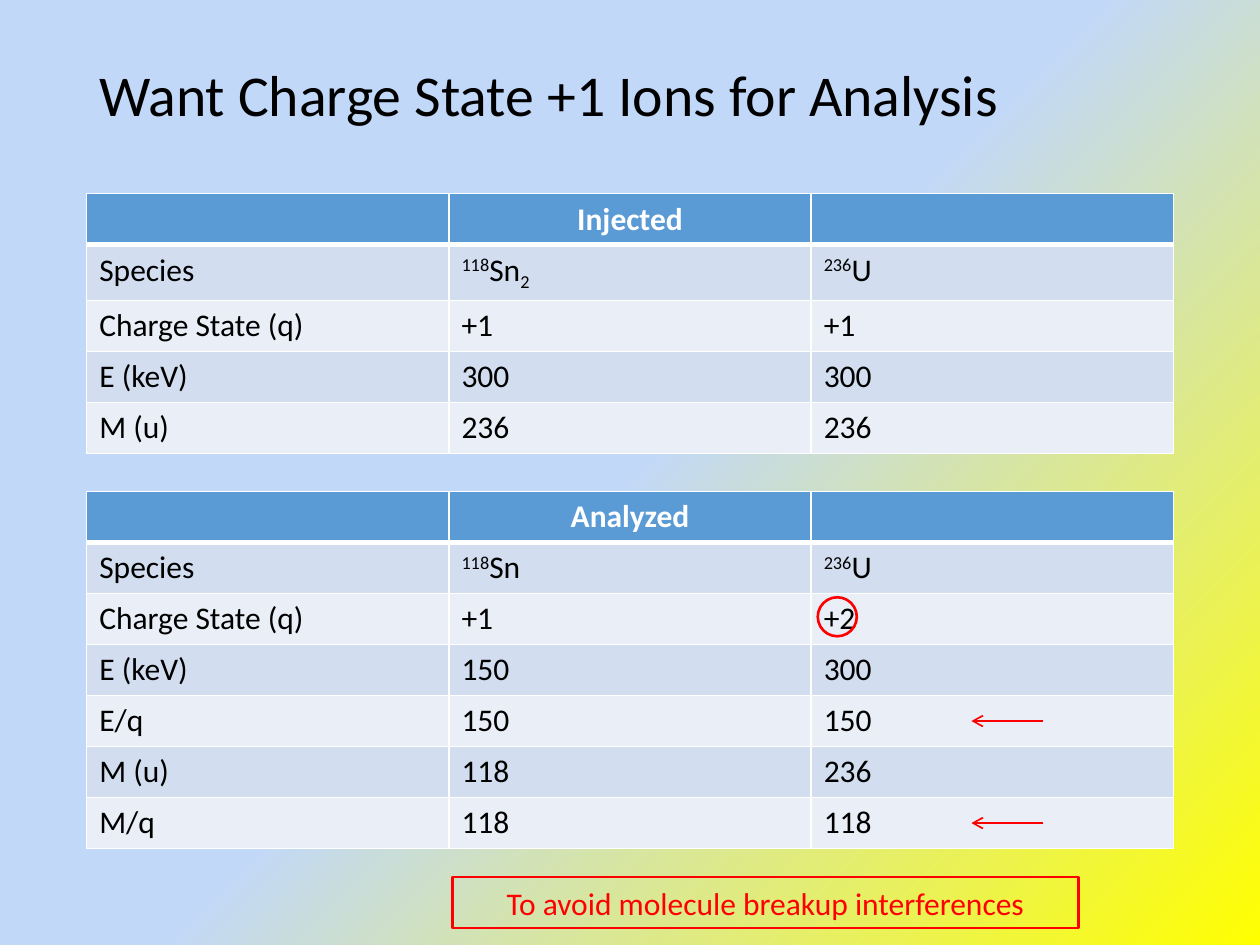
from lxml.etree import SubElement
from pptx import Presentation
from pptx.dml.color import RGBColor
from pptx.enum.shapes import MSO_CONNECTOR, MSO_SHAPE
from pptx.enum.text import MSO_ANCHOR, PP_ALIGN
from pptx.oxml.ns import qn
from pptx.util import Inches, Pt

deck = Presentation()
deck.slide_width, deck.slide_height = Inches(10), Inches(7.5)
page = deck.slides.add_slide(deck.slide_layouts[6])
color = RGBColor.from_string

RED, WHITE, BLACK = "FF0000", "FFFFFF", "000000"
HEADER, BANDS = "5B9BD5", ("EAEFF7", "D2DEEF")
BASELINES = {"^": "30000", "_": "-25000"}
LEFT, TABLE_COLUMN, TABLE_ROW = 6.88, 28.75, 5.4
ANALYZED_TOP = 52


def grid(*lengths):
    sides = (deck.slide_width, deck.slide_height)
    return [round(length * sides[index % 2] / 100) for index, length in enumerate(lengths)]


def style(para, size, hue, bold=False):
    para.font.name = "Calibri"
    para.font.size = Pt(size)
    para.font.bold = bold
    para.font.color.rgb = color(hue)


backdrop = page.background.fill
backdrop.gradient()
backdrop.gradient_angle = 315
for stop, position, hue in zip(backdrop.gradient_stops, (0.5, 1), ("C2D8F8", "FFFF00")):
    stop.position = position
    stop.color.rgb = color(hue)

title = page.shapes.add_textbox(*grid(LEFT, 5.33, 3 * TABLE_COLUMN, 10.13)).text_frame
title.word_wrap = True
title.vertical_anchor = MSO_ANCHOR.MIDDLE
title.text = "Want Charge State +1 Ions for Analysis"
title.paragraphs[0].line_spacing = 0.9
style(title.paragraphs[0], 33, BLACK)

tables = [
    (20.5, [
        ("", "Injected", ""),
        ("Species", "^118|Sn|_2", "^236|U"),
        ("Charge State (q)", "+1", "+1"),
        ("E (keV)", "300", "300"),
        ("M (u)", "236", "236"),
    ]),
    (ANALYZED_TOP, [
        ("", "Analyzed", ""),
        ("Species", "^118|Sn", "^236|U"),
        ("Charge State (q)", "+1", "+2"),
        ("E (keV)", "150", "300"),
        ("E/q", "150", "150"),
        ("M (u)", "118", "236"),
        ("M/q", "118", "118"),
    ]),
]
for top, rows in tables:
    area = grid(LEFT, top, 3 * TABLE_COLUMN, TABLE_ROW * len(rows))
    table = page.shapes.add_table(len(rows), 3, *area).table
    for row_index, row in enumerate(rows):
        header = row_index == 0
        for column_index, content in enumerate(row):
            cell = table.cell(row_index, column_index)
            properties = cell._tc.get_or_add_tcPr()
            for side in "LRTB":
                thick = (side == "B" and header) or (side == "T" and row_index == 1)
                border = SubElement(properties, qn(f"a:ln{side}"), w=str(Pt(3 if thick else 1)))
                paint = SubElement(border, qn("a:solidFill"))
                SubElement(paint, qn("a:srgbClr"), val=WHITE)
            cell.fill.solid()
            cell.fill.fore_color.rgb = color(HEADER if header else BANDS[row_index % 2])
            para = cell.text_frame.paragraphs[0]
            style(para, 18, WHITE if header else BLACK, header)
            if header:
                para.alignment = PP_ALIGN.CENTER
            for piece in filter(None, content.split("|")):
                span = para.add_run()
                span.text = piece.lstrip("^_")
                if piece[0] in BASELINES:
                    span._r.get_or_add_rPr().set("baseline", BASELINES[piece[0]])

for table_row in (4, 6):
    height = ANALYZED_TOP + TABLE_ROW * (table_row + 0.5)
    arrow = page.shapes.add_connector(MSO_CONNECTOR.STRAIGHT, *grid(82.8, height, 77.1, height))
    arrow.line.color.rgb = color(RED)
    arrow.line.width = Pt(1)
    SubElement(arrow.line._get_or_add_ln(), qn("a:tailEnd"), type="arrow")
    SubElement(arrow._element.spPr, qn("a:effectLst"))

outlines = [
    (MSO_SHAPE.RECTANGLE, (35.9, 92.8, 49.7, 5.4), "To avoid molecule breakup interferences"),
    (MSO_SHAPE.OVAL, (64.9, 63.2, 3.1, 4.13), ""),
]
for kind, area, caption in outlines:
    box = page.shapes.add_shape(kind, *grid(*area))
    box.shadow.inherit = False
    box.fill.background()
    box.line.color.rgb = color(RED)
    box.line.width = Pt(1.5)
    if caption:
        box.text_frame.word_wrap = True
        box.text_frame.text = caption
        para = box.text_frame.paragraphs[0]
        para.alignment = PP_ALIGN.CENTER
        style(para, 18, RED)

deck.save("out.pptx")
